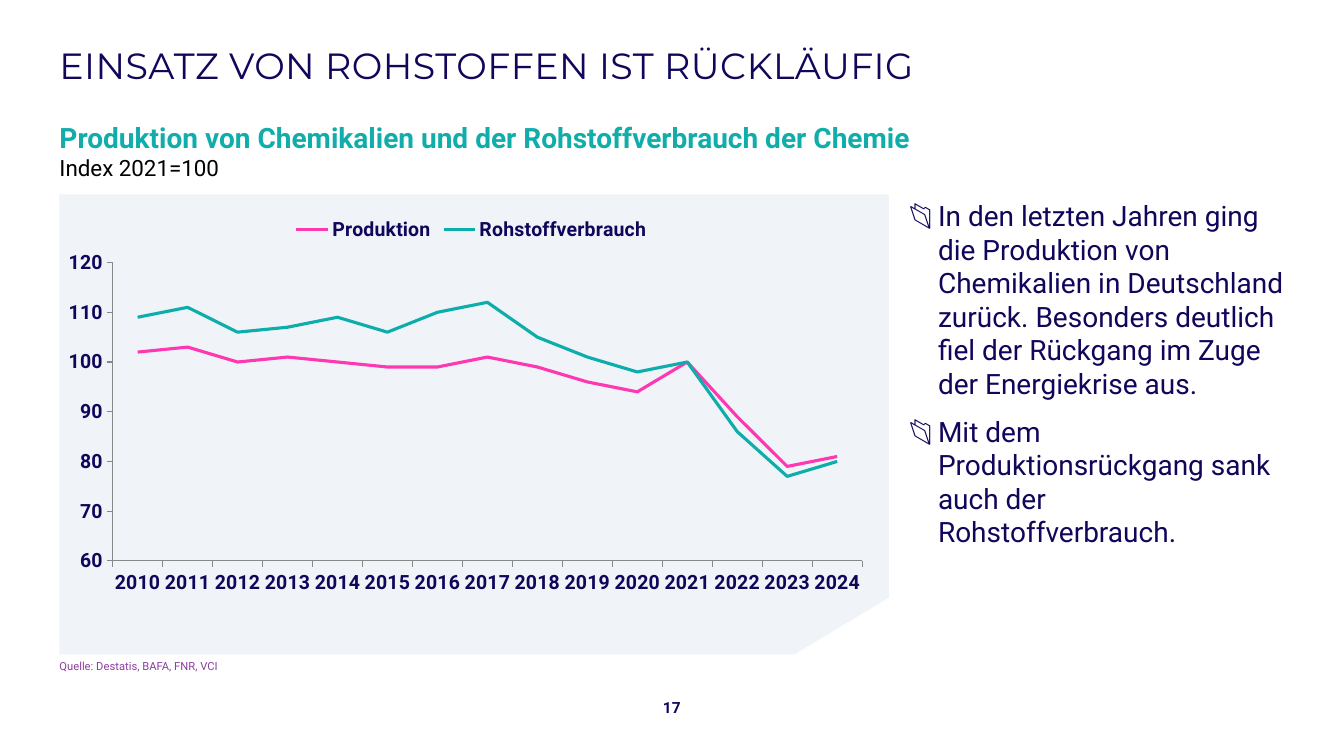
import lxml.etree
import pptx
import pptx.chart.data
import pptx.dml.color
import pptx.enum.chart
import pptx.enum.text
import pptx.oxml
import pptx.oxml.ns
import pptx.util
from pptx.util import Cm

COLORS = {
    "navy": "10065A", "teal": "10ADAA", "purple": "8C3E9F", "black": "000000",
    "panel": "F0F3F7", "axis": "888888", "pink_line": "FE38B2", "teal_line": "0CADAA",
}
ANCHOR = pptx.enum.text.MSO_ANCHOR
ALIGN = pptx.enum.text.PP_ALIGN
MARGIN = 1.5
BULLET_INDENT = Cm(0.73)


def color(name):
    return pptx.dml.color.RGBColor.from_string(COLORS[name])


def add_text(place, texts, size, ink, bold=False, font="Roboto", inset=0.0,
             anchor=ANCHOR.TOP, align=ALIGN.LEFT, bullets=False, spacing=None):
    """Add a text box with one paragraph per text; place is left, top, width, height in cm."""
    box = slide.shapes.add_textbox(*[Cm(length) for length in place])
    frame = box.text_frame
    frame.word_wrap = True
    frame.vertical_anchor = anchor
    frame.margin_left = frame.margin_right = 0
    frame.margin_top = frame.margin_bottom = Cm(inset)
    for index, text in enumerate(texts):
        para = frame.paragraphs[0] if index == 0 else frame.add_paragraph()
        para.alignment = align
        if index:
            para.space_before = pptx.util.Pt(10)
        if bullets:
            properties = para._p.get_or_add_pPr()
            properties.set("marL", str(BULLET_INDENT))
            properties.set("indent", str(-BULLET_INDENT))
            bullet_color = lxml.etree.SubElement(properties, pptx.oxml.ns.qn("a:buClr"))
            lxml.etree.SubElement(bullet_color, pptx.oxml.ns.qn("a:srgbClr"), val=COLORS[ink])
            lxml.etree.SubElement(properties, pptx.oxml.ns.qn("a:buFont"), typeface=font)
            lxml.etree.SubElement(properties, pptx.oxml.ns.qn("a:buChar"), char="📂")
        span = para.add_run()
        span.text = text
        span.font.name = font
        span.font.size = pptx.util.Pt(size)
        span.font.bold = bold
        span.font.color.rgb = color(ink)
        if spacing:
            span._r.get_or_add_rPr().set("spc", str(spacing))


deck = pptx.Presentation()
deck.slide_width = Cm(33.87)
deck.slide_height = Cm(19.05)
slide = deck.slides.add_slide(deck.slide_layouts[6])

# Panel with a cut corner
outline = [(MARGIN, 4.9), (22.4, 4.9), (22.4, 15.06), (20.02, 16.49), (MARGIN, 16.49)]
points = [(Cm(x), Cm(y)) for x, y in outline]
builder = slide.shapes.build_freeform(*points[0], scale=1.0)
builder.add_line_segments(points[1:], close=True)
panel = builder.convert_to_shape()
panel.shadow.inherit = False
panel.fill.solid()
panel.fill.fore_color.rgb = color("panel")
panel.line.fill.background()

# Texts
add_text((MARGIN, 0.38, 31, 2.5), ["EINSATZ VON ROHSTOFFEN IST RÜCKLÄUFIG"], 26, "navy",
         font="Montserrat", inset=0.1, anchor=ANCHOR.MIDDLE, spacing=30)
add_text((MARGIN, 3.04, 31, 0.8),
         ["Produktion von Chemikalien und der Rohstoffverbrauch der Chemie"],
         20, "teal", bold=True)
add_text((MARGIN, 3.89, 31, 0.7), ["Index 2021=100"], 16, "black")
add_text((22.91, 4.9, 9.6, 11.2), [
    "In den letzten Jahren ging die Produktion von Chemikalien in Deutschland zurück. "
    "Besonders deutlich fiel der Rückgang im Zuge der Energiekrise aus.",
    "Mit dem Produktionsrückgang sank auch der Rohstoffverbrauch.",
], 20, "navy", inset=0.1, bullets=True)
add_text((MARGIN, 16.61, 28, 0.33), ["Quelle: Destatis, BAFA, FNR, VCI"], 8, "purple")
add_text((16.18, 17.48, 1.5, 0.7), ["17"], 11, "navy", bold=True,
         anchor=ANCHOR.MIDDLE, align=ALIGN.CENTER)

# Line chart
series_list = [
    ("Produktion", "pink_line",
     [102, 103, 100, 101, 100, 99, 99, 101, 99, 96, 94, 100, 89, 79, 81]),
    ("Rohstoffverbrauch", "teal_line",
     [109, 111, 106, 107, 109, 106, 110, 112, 105, 101, 98, 100, 86, 77, 80]),
]
data = pptx.chart.data.CategoryChartData()
data.categories = [str(year) for year in range(2010, 2025)]
for name, _, values in series_list:
    data.add_series(name, values)
chart = slide.shapes.add_chart(pptx.enum.chart.XL_CHART_TYPE.LINE, Cm(1.73), Cm(5.2),
                               Cm(20.2), Cm(10.9), data).chart
chart.has_title = False
chart.has_legend = True
chart.legend.position = pptx.enum.chart.XL_LEGEND_POSITION.TOP
chart.legend.include_in_layout = False
chart.plots[0].vary_by_categories = False
for series, (_, ink, _) in zip(chart.plots[0].series, series_list):
    series.smooth = False
    series.marker.style = pptx.enum.chart.XL_MARKER_STYLE.NONE
    series.format.line.color.rgb = color(ink)
    series.format.line.width = pptx.util.Pt(2.25)

for axis in (chart.category_axis, chart.value_axis):
    axis.has_major_gridlines = False
    axis.major_tick_mark = pptx.enum.chart.XL_TICK_MARK.OUTSIDE
    axis.minor_tick_mark = pptx.enum.chart.XL_TICK_MARK.NONE
    axis.format.line.color.rgb = color("axis")
    axis.format.line.width = pptx.util.Pt(0.75)
chart.value_axis.minimum_scale = 60
chart.value_axis.maximum_scale = 120
chart.value_axis.major_unit = 10
chart.value_axis.tick_labels.number_format = "#,##0"
chart.value_axis.tick_labels.number_format_is_linked = False

for font in (chart.font, chart.legend.font, chart.category_axis.tick_labels.font,
             chart.value_axis.tick_labels.font):
    font.name = "Roboto"
    font.size = pptx.util.Pt(14)
    font.bold = True
    font.color.rgb = color("navy")

# Fixed place of the plot area, as shares of the chart
plot_area = chart._chartSpace.chart.plotArea
for old_layout in plot_area.findall(pptx.oxml.ns.qn("c:layout")):
    plot_area.remove(old_layout)
layout = pptx.oxml.parse_xml(
    f'<c:layout {pptx.oxml.ns.nsdecls("c")}><c:manualLayout>'
    '<c:layoutTarget val="inner"/><c:xMode val="edge"/><c:yMode val="edge"/>'
    '<c:x val="0.05"/><c:y val="0.13"/><c:w val="0.94"/><c:h val="0.69"/>'
    '</c:manualLayout></c:layout>')
plot_area.insert(0, layout)

deck.save("out.pptx")
